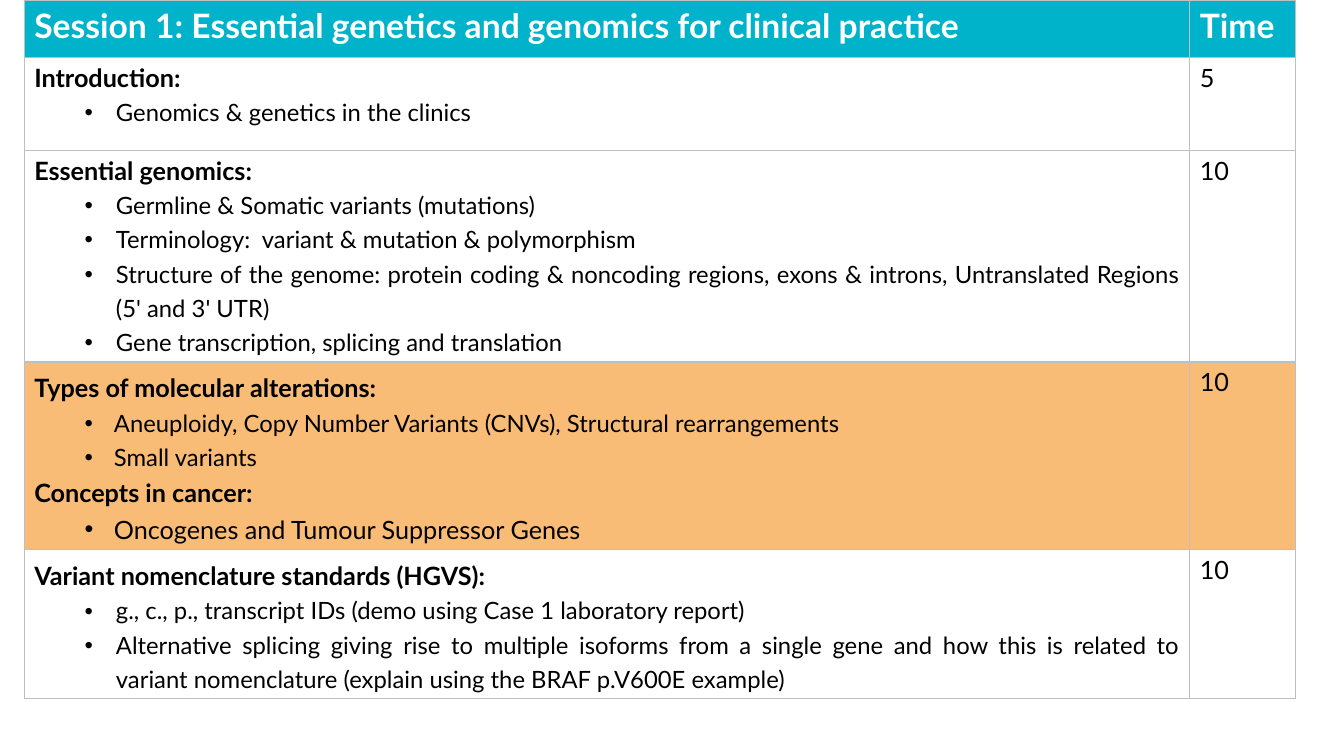
from dataclasses import dataclass
from lxml.etree import SubElement
from pptx import Presentation
from pptx.dml.color import RGBColor
from pptx.enum.text import PP_ALIGN
from pptx.oxml.ns import qn
from pptx.util import Pt

PX = 9144


@dataclass
class Theme:
    font: str = "Lato"
    head: int = 24
    body: int = 18
    item: int = 17
    teal: str = "00B2CA"
    sand: str = "F9BC76"
    grid: str = "BFBFBF"
    black: str = "000000"
    white: str = "FFFFFF"


theme = Theme()


def style(para, size, color, bold):
    for run in para.runs:
        run.font.name = theme.font
        run.font.size = Pt(size)
        run.font.bold = bold
        run.font.color.rgb = RGBColor.from_string(color)


def paint(cell, fill):
    props = cell._tc.get_or_add_tcPr()
    for side in ("a:lnL", "a:lnR", "a:lnT", "a:lnB"):
        line = SubElement(props, qn(side), w=str(Pt(1)))
        SubElement(SubElement(line, qn("a:solidFill")), qn("a:srgbClr"), val=theme.grid)
    if fill:
        cell.fill.solid()
        cell.fill.fore_color.rgb = RGBColor.from_string(fill)
    else:
        cell.fill.background()


topics = [
    (92, None, "5", 1.0, 81, 31, [
        ("Introduction:", [
            ("Genomics & genetics in the clinics", theme.item)])]),
    (106, None, "10", 1.0, 81, 31, [
        ("Essential genomics:", [
            ("Germline & Somatic variants (mutations)", theme.item),
            ("Terminology:  variant & mutation & polymorphism", theme.item),
            ("Structure of the genome: protein coding & noncoding regions, exons & introns, "
             "Untranslated Regions (5' and 3' UTR)", theme.item),
            ("Gene transcription, splicing and translation", theme.item)])]),
    (147, theme.sand, "10", 1.2, 79, 29, [
        ("Types of molecular alterations:", [
            ("Aneuploidy, Copy Number Variants (CNVs), Structural rearrangements", theme.item),
            ("Small variants", theme.item)]),
        ("Concepts in cancer:", [
            ("Oncogenes and Tumour Suppressor Genes", theme.body)])]),
    (139, None, "10", 1.2, 81, 31, [
        ("Variant nomenclature standards (HGVS):", [
            ("g., c., p., transcript IDs (demo using Case 1 laboratory report)", theme.item),
            ("Alternative splicing giving rise to multiple isoforms from a single gene and how "
             "this is related to variant nomenclature (explain using the BRAF p.V600E example)",
             theme.item)])]),
]

deck = Presentation()
deck.slide_width = 1333 * PX
deck.slide_height = 750 * PX
slide = deck.slides.add_slide(deck.slide_layouts[6])

frame = slide.shapes.add_table(len(topics) + 1, 2, 24 * PX, 0, 1261 * PX, 684 * PX)
table = frame.table
table.first_row = False
table.horz_banding = False
for col, width in zip(table.columns, (1156, 105)):
    col.width = width * PX

table.rows[0].height = 57 * PX
titles = ("Session 1: Essential genetics and genomics for clinical practice", "Time")
for cell, title in zip(table.rows[0].cells, titles):
    cell.text_frame.text = title
    style(cell.text_frame.paragraphs[0], theme.head, theme.white, True)
    paint(cell, theme.teal)

for index, (height, fill, time, space, left, hang, groups) in enumerate(topics, 1):
    table.rows[index].height = height * PX
    cell, clock = table.rows[index].cells
    paint(cell, fill)
    paint(clock, fill)
    clock.text_frame.text = time
    style(clock.text_frame.paragraphs[0], theme.body, theme.black, False)

    body = cell.text_frame
    para = body.paragraphs[0]
    for order, (head, items) in enumerate(groups):
        if order:
            para = body.add_paragraph()
        para.text = head
        para.alignment = PP_ALIGN.JUSTIFY
        para.line_spacing = space
        style(para, theme.body, theme.black, True)
        for text, size in items:
            para = body.add_paragraph()
            props = para._p.get_or_add_pPr()
            props.set("marL", str(left * PX))
            props.set("indent", str(-hang * PX))
            SubElement(props, qn("a:buFont"), typeface="Arial")
            SubElement(props, qn("a:buChar"), char="•")
            para.level = 1
            para.text = text
            para.alignment = PP_ALIGN.JUSTIFY
            para.line_spacing = 1.2
            style(para, size, theme.black, False)

frame.height = 684 * PX
deck.save("out.pptx")
